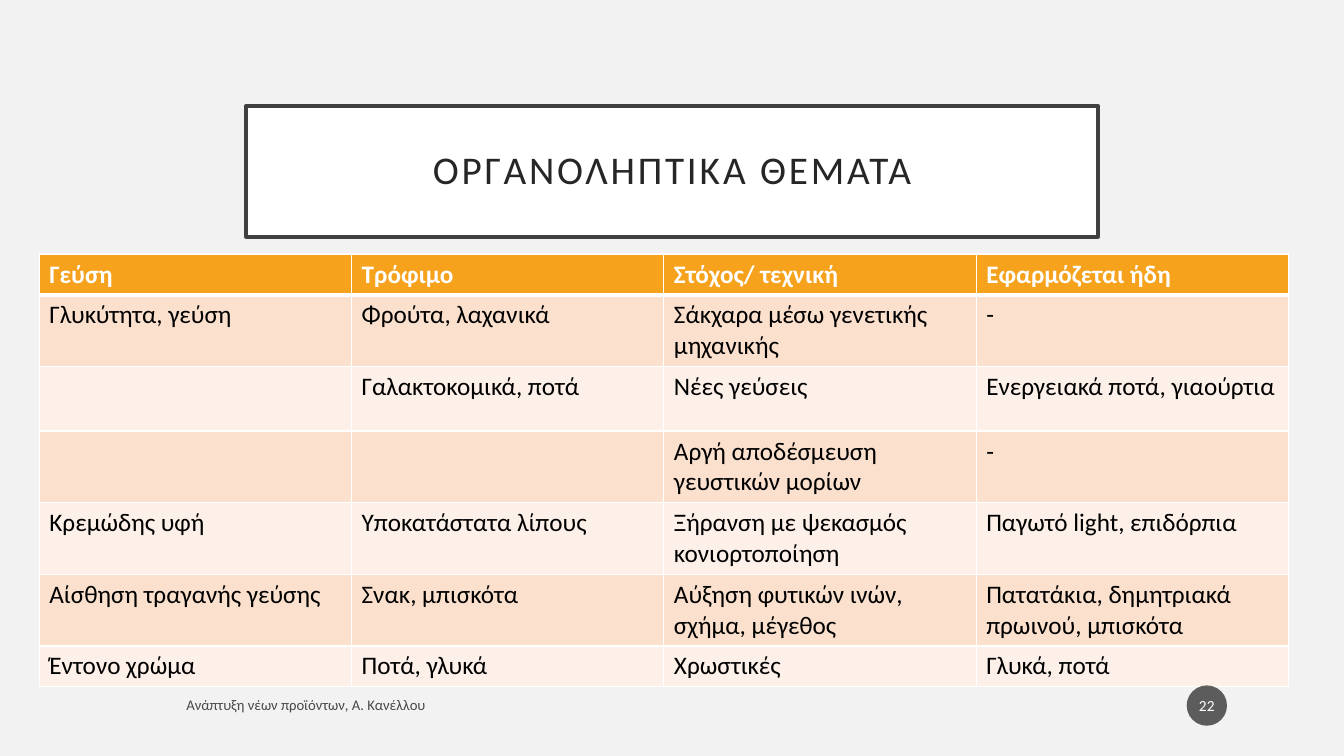
from lxml import etree
from pptx import Presentation
from pptx.dml.color import RGBColor
from pptx.enum.lang import MSO_LANGUAGE_ID
from pptx.enum.shapes import MSO_SHAPE
from pptx.enum.text import MSO_ANCHOR, PP_ALIGN
from pptx.oxml.ns import qn
from pptx.util import Inches, Pt

# Content
TITLE = "Οργανοληπτικά θέματα"
HEADER = ["Γεύση", "Τρόφιμο", "Στόχος/ τεχνική", "Εφαρμόζεται ήδη"]
BODY = [
    ["Γλυκύτητα, γεύση", "Φρούτα, λαχανικά", "Σάκχαρα μέσω γενετικής μηχανικής", "-"],
    ["", "Γαλακτοκομικά, ποτά", "Νέες γεύσεις", "Ενεργειακά ποτά, γιαούρτια"],
    ["", "", "Αργή αποδέσμευση γευστικών μορίων", "-"],
    ["Κρεμώδης υφή", "Υποκατάστατα λίπους", "Ξήρανση με ψεκασμός κονιορτοποίηση",
     "Παγωτό light, επιδόρπια"],
    ["Αίσθηση τραγανής γεύσης", "Σνακ, μπισκότα", "Αύξηση φυτικών ινών, σχήμα, μέγεθος",
     "Πατατάκια, δημητριακά πρωινού, μπισκότα"],
    ["Έντονο χρώμα", "Ποτά, γλυκά", "Χρωστικές", "Γλυκά, ποτά"],
]
FOOTER = "Ανάπτυξη νέων προϊόντων, Α. Κανέλλου"
PAGE_NUMBER = "22"

# Format
FONT = "Calibri"
COLORS = {"background": "F2F2F2", "white": "FFFFFF", "frame": "404040", "title": "262626",
          "header": "F6A21D", "odd": "FBE0CD", "even": "FDF0E8", "black": "000000",
          "badge": "1D1D1D"}
SHORT_ROW, TALL_ROW = 0.36, 0.64
ROW_HEIGHTS = [SHORT_ROW] + [TALL_ROW] * 4 + [SHORT_ROW] * 2
TABLE_LEFT, TABLE_TOP, TABLE_WIDTH = 0.39, 2.52, 12.39
CENTER, MIDDLE = PP_ALIGN.CENTER, MSO_ANCHOR.MIDDLE
GREEK = MSO_LANGUAGE_ID.GREEK


def color(name):
    return RGBColor.from_string(COLORS[name])


def set_alpha(properties, percent):
    shade = properties.find(qn("a:solidFill"))[0]
    etree.SubElement(shade, qn("a:alpha")).set("val", str(percent * 1000))


def write(frame, text, size=18, ink="black", bold=False, align=None, anchor=None, insets=None):
    frame.word_wrap = True
    if anchor is not None:
        frame.vertical_anchor = anchor
    if insets:
        side, top = map(Inches, insets)
        frame.margin_left = frame.margin_right = side
        frame.margin_top = frame.margin_bottom = top
    para = frame.paragraphs[0]
    para.alignment = align
    if not text:
        para.font.size = Pt(size)
        return None
    span = para.add_run()
    span.text = text
    font = span.font
    font.name, font.size, font.bold = FONT, Pt(size), bold
    font.color.rgb = color(ink)
    font.language_id = GREEK
    return span


def set_borders(cell, widths):
    properties = cell._tc.get_or_add_tcPr()
    for index, (side, width) in enumerate(widths.items()):
        line = etree.Element(qn("a:ln" + side), w=str(Pt(width)))
        fill = etree.SubElement(line, qn("a:solidFill"))
        etree.SubElement(fill, qn("a:srgbClr"), val=COLORS["white"])
        properties.insert(index, line)


# Page
deck = Presentation()
deck.slide_width, deck.slide_height = Inches(13.33), Inches(7.5)
page = deck.slides.add_slide(deck.slide_layouts[5])
page.background.fill.solid()
page.background.fill.fore_color.rgb = color("background")

# Framed title
title = page.shapes.title
title.left, title.top, title.width, title.height = map(Inches, (2.44, 1.05, 8.45, 1.3))
title.fill.solid()
title.fill.fore_color.rgb = color("white")
title.line.color.rgb = color("frame")
title.line.width = Pt(2.5)
title_span = write(title.text_frame, TITLE, size=28, ink="title", align=CENTER,
                   anchor=MIDDLE, insets=(0.2, 0.2))
title.text_frame.paragraphs[0].line_spacing = 0.9
title_format = title_span.font._element
title_format.set("cap", "all")
title_format.set("spc", "200")

# Table of sensory goals
rows = [HEADER] + BODY
grid = page.shapes.add_table(
    len(rows), len(HEADER), Inches(TABLE_LEFT), Inches(TABLE_TOP),
    Inches(TABLE_WIDTH), Inches(sum(ROW_HEIGHTS))).table
grid.horz_banding = False
for column in grid.columns:
    column.width = Inches(TABLE_WIDTH / len(HEADER))
for number, texts in enumerate(rows):
    grid.rows[number].height = Inches(ROW_HEIGHTS[number])
    is_header = number == 0
    shade = "header" if is_header else ("odd" if number % 2 else "even")
    top = 3 if number == 1 else 1
    bottom = 3 if is_header else 1
    for position, text in enumerate(texts):
        cell = grid.cell(number, position)
        cell.fill.solid()
        cell.fill.fore_color.rgb = color(shade)
        set_borders(cell, {"L": 1, "R": 1, "T": top, "B": bottom})
        write(cell.text_frame, text, ink="white" if is_header else "black", bold=is_header)

# Footer and page number
footer = page.shapes.add_textbox(*map(Inches, (1.75, 6.82, 6.45, 0.35)))
footer_span = write(footer.text_frame, FOOTER, size=10.5, anchor=MIDDLE)
set_alpha(footer_span.font._element, 70)

badge = page.shapes.add_shape(MSO_SHAPE.OVAL, *map(Inches, (11.77, 6.8, 0.4, 0.4)))
badge.shadow.inherit = False
badge.fill.solid()
badge.fill.fore_color.rgb = color("badge")
set_alpha(badge._element.spPr, 70)
badge.line.fill.background()
write(badge.text_frame, PAGE_NUMBER, size=11, ink="white", align=CENTER, anchor=MIDDLE,
      insets=(0.02, 0.05))

deck.save("out.pptx")
